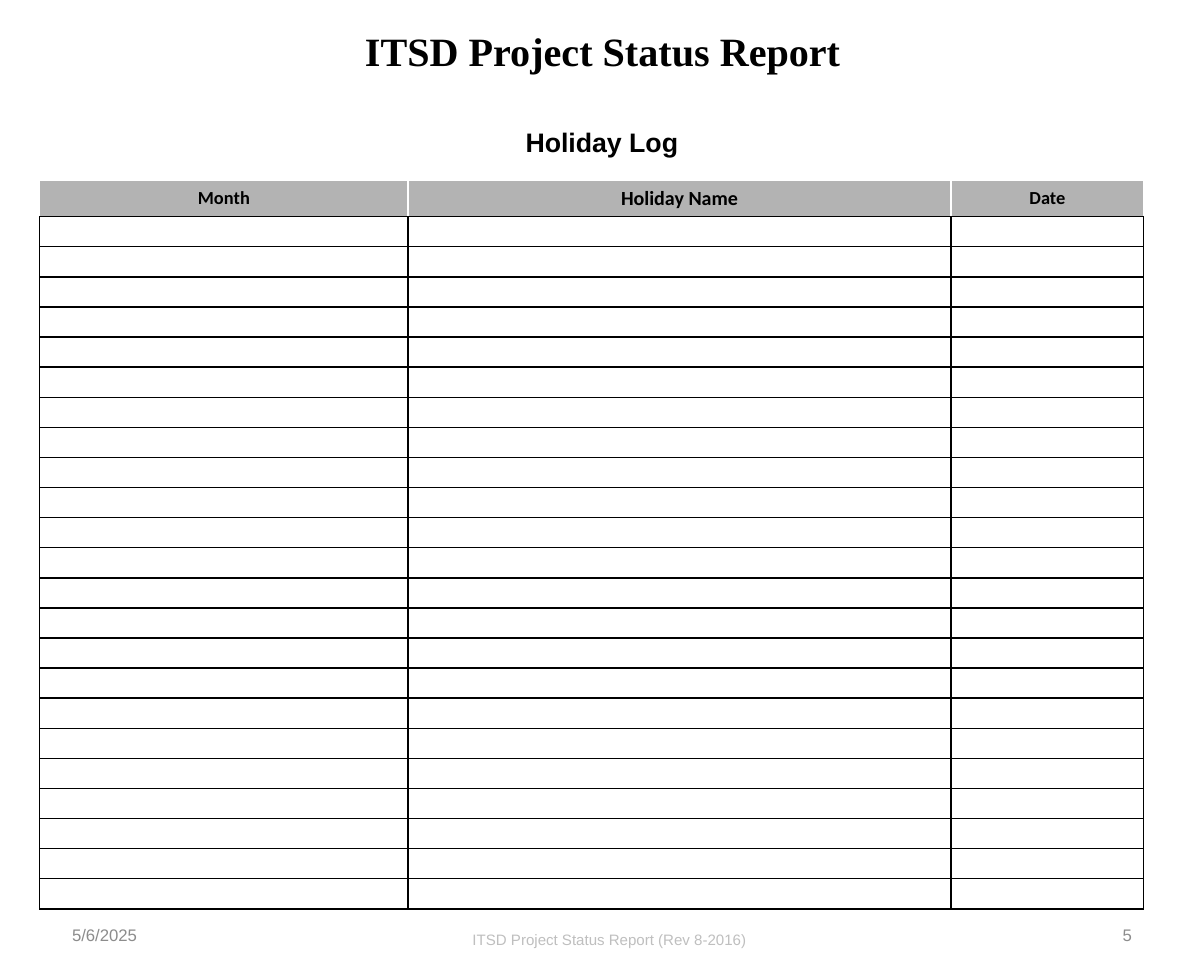
from dataclasses import dataclass

from lxml import etree
from pptx import Presentation
from pptx.dml.color import RGBColor
from pptx.enum.text import MSO_ANCHOR, PP_ALIGN
from pptx.oxml.ns import qn
from pptx.slide import Slide
from pptx.table import Table, _Cell
from pptx.text.text import TextFrame
from pptx.util import Pt

EMU_PER_PX = 9144  # 100 px to the inch
LEFT, CENTER, RIGHT = PP_ALIGN.LEFT, PP_ALIGN.CENTER, PP_ALIGN.RIGHT
TOP, MIDDLE = MSO_ANCHOR.TOP, MSO_ANCHOR.MIDDLE

BLACK = RGBColor(0x00, 0x00, 0x00)
WHITE = RGBColor(0xFF, 0xFF, 0xFF)
HEADER_GRAY = RGBColor(0xB3, 0xB3, 0xB3)
FOOTER_GRAY = RGBColor(0x8C, 0x8C, 0x8C)
REVISION_GRAY = RGBColor(0xBF, 0xBF, 0xBF)

TITLE_ONLY_LAYOUT = 5
HEADER_HEIGHT, ROW_HEIGHT, LOG_ROWS = 30, 25, 23
EMPTY_CELL_SIZE = 8


@dataclass(frozen=True)
class Label:
    text: str
    left: int
    top: int
    width: int
    height: int
    size: int
    color: RGBColor
    bold: bool = False
    align: PP_ALIGN = CENTER
    anchor: MSO_ANCHOR = TOP
    line_spacing: float = 1.0


@dataclass(frozen=True)
class Column:
    heading: str
    width: int
    size: int


LABELS = [
    Label("Holiday Log", 250, 100, 500, 37, 16, BLACK, bold=True),
    Label("5/6/2025", 50, 757, 233, 43, 10, FOOTER_GRAY,
          align=LEFT, anchor=MIDDLE, line_spacing=0.8),
    Label("5", 717, 757, 233, 43, 10, FOOTER_GRAY,
          align=RIGHT, anchor=MIDDLE, line_spacing=0.8),
    Label("ITSD Project Status Report (Rev 8-2016)", 370, 768, 272, 25, 9, REVISION_GRAY),
]
COLUMNS = [
    Column("Month", 306, 11),
    Column("Holiday Name", 451, 12),
    Column("Date", 160, 11),
]


def px(length: int) -> int:
    return length * EMU_PER_PX


def write_text(frame: TextFrame, text: str, *, size: int, font: str = "Arial",
               color: RGBColor = BLACK, bold: bool = False,
               align: PP_ALIGN = CENTER, line_spacing: float = 1.0) -> None:
    para = frame.paragraphs[0]
    para.alignment = align
    para.line_spacing = line_spacing
    span = para.add_run()
    span.text = text
    span.font.name = font
    span.font.size = Pt(size)
    span.font.bold = bold
    span.font.color.rgb = color


def add_title(page: Slide, text: str) -> None:
    title = page.shapes.title
    title.left, title.top, title.width, title.height = map(px, (142, 17, 717, 51))
    title.text_frame.vertical_anchor = TOP
    write_text(title.text_frame, text, size=24, font="Times New Roman", bold=True)


def add_label(page: Slide, label: Label) -> None:
    box = page.shapes.add_textbox(
        px(label.left), px(label.top), px(label.width), px(label.height))
    frame = box.text_frame
    frame.word_wrap = True
    frame.vertical_anchor = label.anchor
    write_text(frame, label.text, size=label.size, color=label.color, bold=label.bold,
               align=label.align, line_spacing=label.line_spacing)


def style_cell(cell: _Cell, fill: RGBColor, side_and_top: RGBColor) -> None:
    """Give a cell its borders and fill; the bottom border is always black."""
    properties = cell._tc.get_or_add_tcPr()
    borders = {"lnL": side_and_top, "lnR": side_and_top, "lnT": side_and_top, "lnB": BLACK}
    for tag, color in borders.items():
        line = etree.SubElement(properties, qn(f"a:{tag}"), w=str(Pt(1)))
        solid = etree.SubElement(line, qn("a:solidFill"))
        etree.SubElement(solid, qn("a:srgbClr"), val=str(color))
    cell.fill.solid()
    cell.fill.fore_color.rgb = fill
    cell.vertical_anchor = MIDDLE
    cell.margin_top = cell.margin_bottom = px(2)


def fill_log(table: Table) -> None:
    for index, column in enumerate(COLUMNS):
        table.columns[index].width = px(column.width)
        header = table.cell(0, index)
        style_cell(header, HEADER_GRAY, WHITE)
        write_text(header.text_frame, column.heading, size=column.size,
                   font="Calibri", bold=True)
    table.rows[0].height = px(HEADER_HEIGHT)
    for row in list(table.rows)[1:]:
        row.height = px(ROW_HEIGHT)
        for cell in row.cells:
            style_cell(cell, WHITE, BLACK)
            para = cell.text_frame.paragraphs[0]
            etree.SubElement(para._p, qn("a:endParaRPr"), sz=str(EMPTY_CELL_SIZE * 100))


def add_holiday_log(page: Slide) -> None:
    width = sum(column.width for column in COLUMNS)
    height = HEADER_HEIGHT + LOG_ROWS * ROW_HEIGHT
    table = page.shapes.add_table(
        LOG_ROWS + 1, len(COLUMNS), px(33), px(150), px(width), px(height)).table
    table.horz_banding = False
    fill_log(table)


def main() -> None:
    deck = Presentation()
    deck.slide_width, deck.slide_height = px(1000), px(800)
    page = deck.slides.add_slide(deck.slide_layouts[TITLE_ONLY_LAYOUT])
    add_title(page, "ITSD Project Status Report")
    for label in LABELS:
        add_label(page, label)
    add_holiday_log(page)
    deck.save("out.pptx")


if __name__ == "__main__":
    main()
